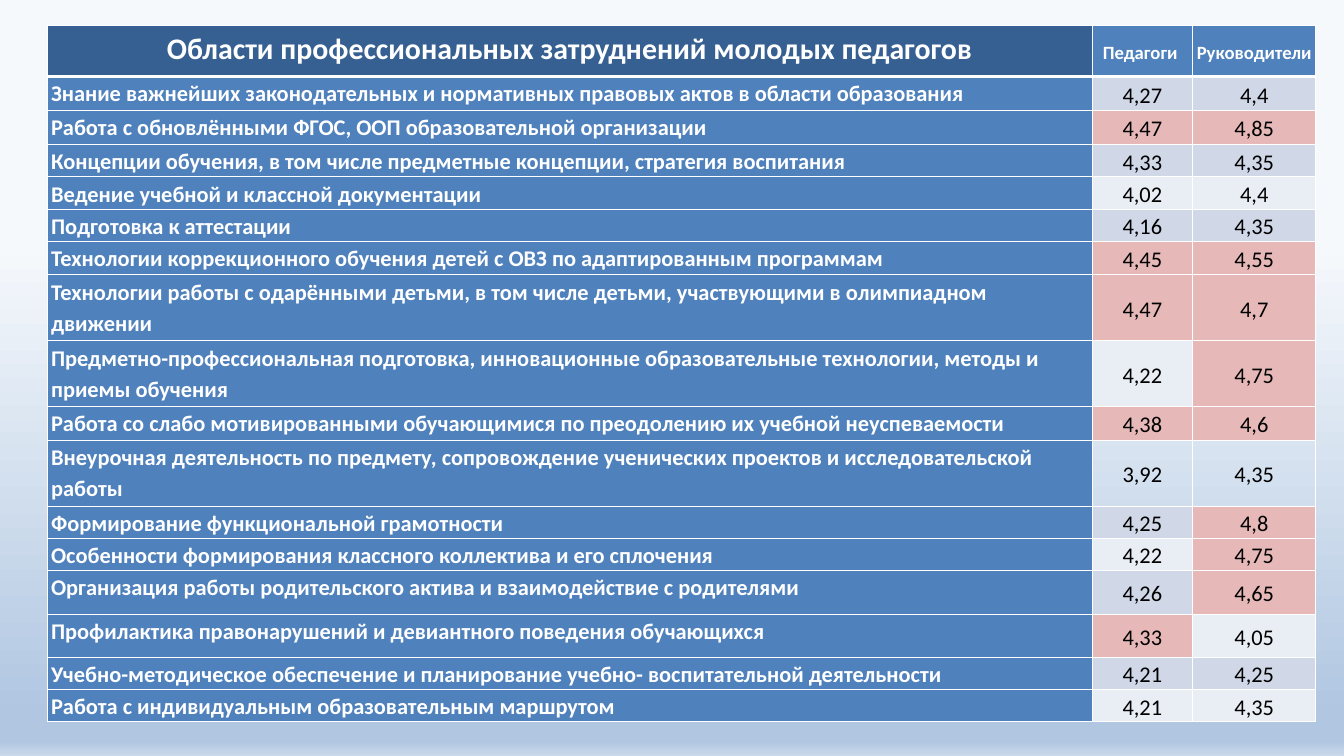
from lxml import etree
from pptx import Presentation
from pptx.dml.color import RGBColor
from pptx.enum.text import MSO_ANCHOR, PP_ALIGN
from pptx.oxml.ns import qn
from pptx.util import Inches, Pt

FONT = "Calibri"
WHITE, BLACK = "FFFFFF", "000000"
NAVY, BLUE = "376092", "4F81BD"
PINK = "E6B9B8"
BANDS = ("D0D8E8", "E9EDF4")
BACKGROUND_STOPS = [(32, "F6F9FC"), (95, "B0C6E1"), (98, "B0C6E1"), (100, "CAD9EB")]

COLUMN_WIDTHS = [15.54, 1.5, 1.83]
HEADER_HEIGHT = 0.76
HEADERS = [  # text, size, fill, anchor
    ("Области профессиональных затруднений молодых педагогов", 32, NAVY, MSO_ANCHOR.TOP),
    ("Педагоги ", 20, BLUE, MSO_ANCHOR.MIDDLE),
    ("Руководители ", 20, BLUE, MSO_ANCHOR.MIDDLE),
]

# Cell looks: B = band colour of the row, P = pink highlight, N = no fill
ROWS = [  # height, area, teachers, managers, looks of the two values
    (0.5, "Знание важнейших законодательных и нормативных правовых актов в области образования", "4,27", "4,4", "BB"),
    (0.51, "Работа с обновлёнными ФГОС, ООП образовательной организации", "4,47", "4,85", "PP"),
    (0.48, "Концепции обучения, в том числе предметные концепции, стратегия воспитания", "4,33", "4,35", "BB"),
    (0.48, "Ведение учебной и классной документации", "4,02", "4,4", "BB"),
    (0.48, "Подготовка к аттестации", "4,16", "4,35", "BB"),
    (0.5, "Технологии коррекционного обучения детей с ОВЗ по адаптированным программам", "4,45", "4,55", "PP"),
    (0.98, "Технологии работы с одарёнными детьми, в том числе детьми, участвующими в олимпиадном движении",
     "4,47", "4,7", "PP"),
    (0.98, "Предметно-профессиональная подготовка, инновационные образовательные технологии, "
           "методы и приемы обучения", "4,22", "4,75", "BP"),
    (0.5, "Работа со слабо мотивированными обучающимися по преодолению их учебной неуспеваемости",
     "4,38", "4,6", "PP"),
    (0.98, "Внеурочная деятельность по предмету, сопровождение ученических проектов и исследовательской работы",
     "3,92", "4,35", "NN"),
    (0.48, "Формирование функциональной грамотности", "4,25", "4,8", "BP"),
    (0.48, "Особенности формирования классного коллектива и его сплочения", "4,22", "4,75", "BP"),
    (0.65, "Организация работы родительского актива и взаимодействие с родителями", "4,26", "4,65", "BP"),
    (0.64, "Профилактика правонарушений и девиантного поведения обучающихся", "4,33", "4,05", "PB"),
    (0.48, "Учебно-методическое обеспечение и планирование учебно- воспитательной деятельности",
     "4,21", "4,25", "BB"),
    (0.48, "Работа с индивидуальным образовательным маршрутом", "4,21", "4,35", "BB"),
]


def rgb(color):
    return RGBColor.from_string(color)


def add_solid_color(parent, color):
    etree.SubElement(parent, qn("a:srgbClr"), val=color)


def paint_background(slide):
    fill = slide.background.fill
    fill.gradient()
    fill.gradient_angle = 270
    stop_list = next(slide.background._cSld.iter(qn("a:gsLst")))
    for stop in list(stop_list):
        stop_list.remove(stop)
    for percent, color in BACKGROUND_STOPS:
        stop = etree.SubElement(stop_list, qn("a:gs"), pos=str(percent * 1000))
        add_solid_color(stop, color)


def set_borders(cell, bottom_width):
    """Draw white borders; they must come before the fill in the cell properties."""
    properties = cell._tc.get_or_add_tcPr()
    widths = {"a:lnL": 1, "a:lnR": 1, "a:lnT": 1, "a:lnB": bottom_width}
    for position, (tag, width) in enumerate(widths.items()):
        line = etree.Element(qn(tag), w=str(Pt(width)))
        add_solid_color(etree.SubElement(line, qn("a:solidFill")), WHITE)
        properties.insert(position, line)


def fill_cell(cell, text, size, fill, color=WHITE, bold=True,
              align=PP_ALIGN.CENTER, anchor=MSO_ANCHOR.MIDDLE, bottom_width=1):
    cell.margin_left = cell.margin_right = Inches(0.05)
    cell.margin_top = cell.margin_bottom = 0
    cell.vertical_anchor = anchor
    if fill:
        cell.fill.solid()
        cell.fill.fore_color.rgb = rgb(fill)
    else:
        cell.fill.background()
    set_borders(cell, bottom_width)
    paragraph = cell.text_frame.paragraphs[0]
    paragraph.alignment = align
    paragraph.line_spacing = 1.15
    paragraph.space_after = Pt(10)
    run = paragraph.add_run()
    run.text = text
    run.font.name = FONT
    run.font.size = Pt(size)
    run.font.bold = bold
    run.font.color.rgb = rgb(color)


def add_difficulty_table(slide):
    heights = [HEADER_HEIGHT] + [row[0] for row in ROWS]
    table = slide.shapes.add_table(
        len(heights), len(COLUMN_WIDTHS), Inches(0.71), Inches(0.38),
        Inches(sum(COLUMN_WIDTHS)), Inches(sum(heights))).table
    for column, width in zip(table.columns, COLUMN_WIDTHS):
        column.width = Inches(width)
    for row, height in zip(table.rows, heights):
        row.height = Inches(height)

    for column, (text, size, fill, anchor) in enumerate(HEADERS):
        fill_cell(table.cell(0, column), text, size, fill, anchor=anchor, bottom_width=3)
    for index, (_, area, teachers, managers, looks) in enumerate(ROWS):
        fill_cell(table.cell(index + 1, 0), area, 24, BLUE,
                  align=PP_ALIGN.LEFT, anchor=MSO_ANCHOR.TOP)
        fills = {"B": BANDS[index % 2], "P": PINK, "N": None}
        for column, (value, look) in enumerate(zip((teachers, managers), looks), 1):
            fill_cell(table.cell(index + 1, column), value, 24, fills[look], BLACK, bold=False)


def main():
    presentation = Presentation()
    presentation.slide_width = Inches(20)
    presentation.slide_height = Inches(11.25)
    slide = presentation.slides.add_slide(presentation.slide_layouts[6])
    paint_background(slide)
    add_difficulty_table(slide)
    presentation.save("out.pptx")


if __name__ == "__main__":
    main()
